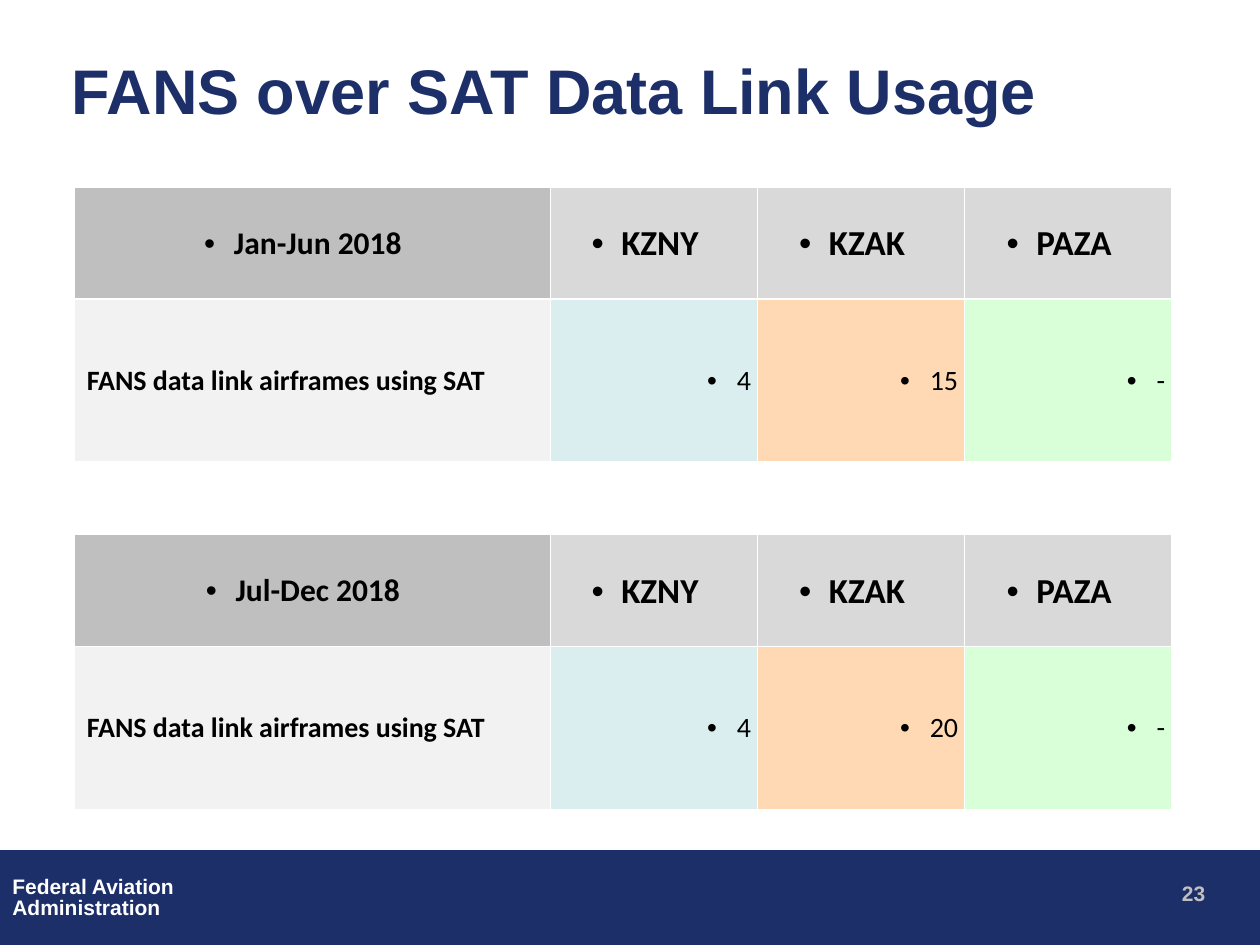
"""Build the slide on FANS over SAT data link usage."""
from dataclasses import dataclass

from lxml import etree
from pptx import Presentation
from pptx import util as u
from pptx.dml.color import RGBColor
from pptx.enum import shapes, text
from pptx.oxml.ns import qn

LEFT, CENTER, RIGHT = text.PP_ALIGN.LEFT, text.PP_ALIGN.CENTER, text.PP_ALIGN.RIGHT


@dataclass(frozen=True)
class Theme:
    """Colours, fonts and type sizes of the slide."""
    navy: str = "1D2F68"
    white: str = "FFFFFF"
    silver: str = "C0C0C0"
    black: str = "000000"
    period: str = "BFBFBF"
    header: str = "D9D9D9"
    measure: str = "F2F2F2"
    regions: tuple = ("DAEDEF", "FFD9B3", "D9FFD9")
    heading_font: str = "Arial"
    table_font: str = "Calibri"
    title_size: int = 36
    footer_size: int = 12
    period_size: int = 18
    header_size: int = 20
    body_size: int = 16


@dataclass(frozen=True)
class CellStyle:
    """Look of one kind of table cell."""
    fill: str
    size: int
    bold: bool = True
    align: text.PP_ALIGN = LEFT
    bullet: bool = True
    insets: tuple = (7.2, 3.6, 7.2, 3.6)


class UsageSlide:
    """Holds the theme and the current slide."""

    def __init__(self, slide, theme):
        self.slide = slide
        self.theme = theme

    def style(self, paragraph, font, size, color, bold=True, align=LEFT):
        paragraph.alignment = align
        for run in paragraph.runs:
            run.font.name = font
            run.font.size = u.Pt(size)
            run.font.bold = bold
            run.font.color.rgb = RGBColor.from_string(color)

    def title(self, wording, left, top, width, height):
        heading = self.slide.shapes.title
        heading.left, heading.top = u.Pt(left), u.Pt(top)
        heading.width, heading.height = u.Pt(width), u.Pt(height)
        frame = heading.text_frame
        frame.text = wording
        frame.auto_size = text.MSO_AUTO_SIZE.NONE
        frame.vertical_anchor = text.MSO_ANCHOR.MIDDLE
        self.style(frame.paragraphs[0], self.theme.heading_font,
                   self.theme.title_size, self.theme.navy)

    def band(self, left, top, width, height):
        footer = self.slide.shapes.add_shape(
            shapes.MSO_SHAPE.RECTANGLE, u.Pt(left), u.Pt(top), u.Pt(width), u.Pt(height))
        footer.shadow.inherit = False
        navy = RGBColor.from_string(self.theme.navy)
        footer.fill.solid()
        footer.fill.fore_color.rgb = navy
        footer.line.color.rgb = navy
        footer.line.width = u.Pt(0.75)

    def label(self, wording, left, top, width, height, color, wrap=True, spacing=1.0):
        frame = self.slide.shapes.add_textbox(
            u.Pt(left), u.Pt(top), u.Pt(width), u.Pt(height)).text_frame
        frame.word_wrap = wrap
        frame.text = wording
        for line in frame.paragraphs:
            line.line_spacing = spacing
            self.style(line, self.theme.heading_font, self.theme.footer_size, color)

    def borders(self, cell):
        properties = cell._tc.get_or_add_tcPr()
        for side in ("a:lnL", "a:lnR", "a:lnT", "a:lnB"):
            edge = etree.SubElement(properties, qn(side), w=str(u.Pt(1)))
            paint = etree.SubElement(edge, qn("a:solidFill"))
            etree.SubElement(paint, qn("a:srgbClr"), val=self.theme.white)

    def bullet(self, paragraph):
        properties = paragraph._p.get_or_add_pPr()
        properties.set("marL", str(u.Pt(6)))
        properties.set("indent", str(u.Pt(-17)))
        etree.SubElement(properties, qn("a:buFont"), typeface=self.theme.heading_font)
        etree.SubElement(properties, qn("a:buChar"), char="•")

    def cell(self, cell, wording, look):
        self.borders(cell)
        cell.fill.solid()
        cell.fill.fore_color.rgb = RGBColor.from_string(look.fill)
        cell.vertical_anchor = text.MSO_ANCHOR.MIDDLE
        (cell.margin_left, cell.margin_top,
         cell.margin_right, cell.margin_bottom) = map(u.Pt, look.insets)
        cell.text_frame.text = wording
        paragraph = cell.text_frame.paragraphs[0]
        if look.bullet:
            self.bullet(paragraph)
        self.style(paragraph, self.theme.table_font, look.size,
                   self.theme.black, look.bold, look.align)

    def table(self, rows, left, top, widths, heights):
        theme = self.theme
        tight, even = (0.72, 0.72, 0.72, 0), (3.6,) * 4
        header = CellStyle(theme.header, theme.header_size, align=CENTER, insets=tight)
        looks = (
            [CellStyle(theme.period, theme.period_size, align=CENTER)]
            + [header] * len(theme.regions),
            [CellStyle(theme.measure, theme.body_size, bullet=False)]
            + [CellStyle(fill, theme.body_size, False, RIGHT, insets=even)
               for fill in theme.regions],
        )
        usage = self.slide.shapes.add_table(
            len(heights), len(widths), u.Pt(left), u.Pt(top),
            u.Pt(sum(widths)), u.Pt(sum(heights))).table
        usage.first_row = usage.horz_banding = False
        for column, width in zip(usage.columns, widths):
            column.width = u.Pt(width)
        for row, height, wordings, styles in zip(usage.rows, heights, rows, looks):
            row.height = u.Pt(height)
            for cell, wording, look in zip(row.cells, wordings, styles):
                self.cell(cell, wording, look)


def main():
    deck = Presentation()
    deck.slide_width, deck.slide_height = u.Pt(720), u.Pt(540)
    theme = Theme()
    page = UsageSlide(deck.slides.add_slide(deck.slide_layouts[5]), theme)

    page.band(0, 486, 720, 54)
    page.label("Federal Aviation\nAdministration", 0, 497.8, 108, 32,
               theme.white, wrap=False, spacing=0.85)
    page.label("23", 668.3, 499.7, 43, 21.6, theme.silver)
    page.title("FANS over SAT Data Link Usage", 33.7, 27, 667, 48)

    periods = (("Jan-Jun 2018", ("4", "15", "-")), ("Jul-Dec 2018", ("4", "20", "-")))
    for index, (period, airframes) in enumerate(periods):
        rows = ((period, "KZNY", "KZAK", "PAZA"),
                ("FANS data link airframes using SAT", *airframes))
        page.table(rows, 42.5, 107 + index * 198.5,
                   (272, 118.3, 118.3, 118.3), (64, 93))

    deck.save("out.pptx")


if __name__ == "__main__":
    main()
